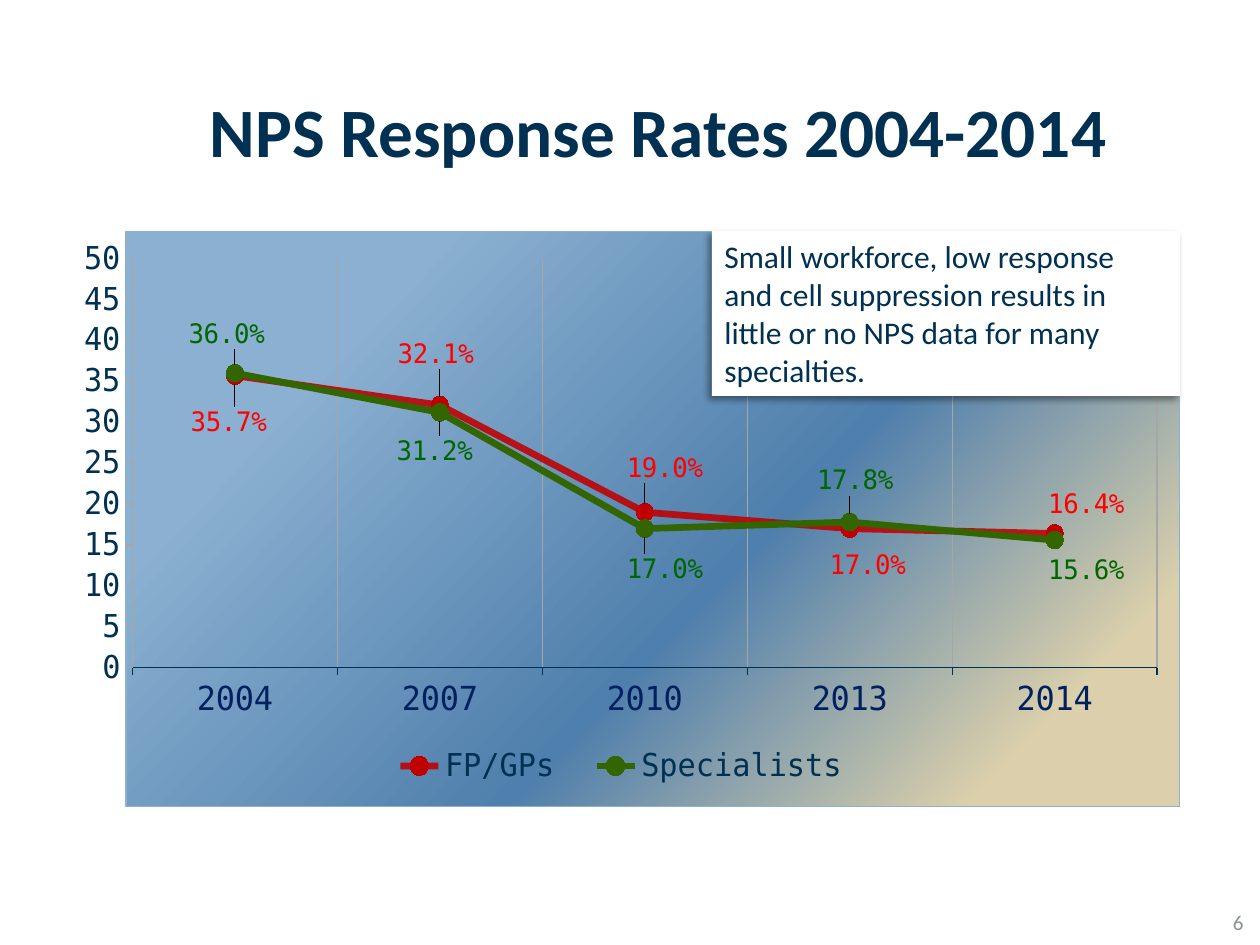
from dataclasses import dataclass

from lxml import etree
from pptx import Presentation
from pptx.chart.data import CategoryChartData
from pptx.dml.color import RGBColor
from pptx.enum.chart import XL_CHART_TYPE, XL_LABEL_POSITION, XL_LEGEND_POSITION
from pptx.enum.chart import XL_MARKER_STYLE, XL_TICK_MARK
from pptx.enum.shapes import MSO_SHAPE
from pptx.enum.text import MSO_ANCHOR, PP_ALIGN
from pptx.oxml import parse_xml
from pptx.oxml.ns import qn
from pptx.util import Pt

LINE_MARKERS = XL_CHART_TYPE.LINE_MARKERS
ABOVE, BELOW = XL_LABEL_POSITION.ABOVE, XL_LABEL_POSITION.BELOW
LEGEND_TOP = XL_LEGEND_POSITION.TOP
CIRCLE = XL_MARKER_STYLE.CIRCLE
TICK_OUT, TICK_NONE = XL_TICK_MARK.OUTSIDE, XL_TICK_MARK.NONE
RECTANGLE = MSO_SHAPE.RECTANGLE
TOP, MIDDLE = MSO_ANCHOR.TOP, MSO_ANCHOR.MIDDLE
LEFT, CENTER, RIGHT = PP_ALIGN.LEFT, PP_ALIGN.CENTER, PP_ALIGN.RIGHT

EMU_PER_PX = 914400 / 126
PAGE_SIZE = (1260, 945)
PERCENT_FORMAT = "#.0\\%"
DRAWING = 'xmlns:a="http://schemas.openxmlformats.org/drawingml/2006/main"'
CHART = 'xmlns:c="http://schemas.openxmlformats.org/drawingml/2006/chart"'


@dataclass(frozen=True)
class Theme:
    text_font: str = "Calibri"
    chart_font: str = "DejaVu Sans Mono"
    ink: str = "003152"
    axis_ink: str = "002060"
    muted: str = "8C9098"
    paper: str = "FFFFFF"
    grid: str = "A6A6A6"
    border: str = "8BB0D1"
    gradient: tuple = ((13, "DBD0AB"), (42, "4F7FAC"), (80, "8BB0D1"))
    title_size: float = 39.6
    body_size: float = 18
    axis_size: float = 19
    label_size: float = 15.3
    number_size: float = 12


@dataclass(frozen=True)
class Line:
    name: str
    values: tuple
    color: str
    label_color: str
    label_places: tuple
    opacity: int = 100


YEARS = ("2004", "2007", "2010", "2013", "2014")
LINES = (
    Line("FP/GPs", (35.7, 32.1, 19, 17, 16.4), "C00000", "FF0000",
         ((BELOW, -7, 17), (ABOVE, -4, -22), (ABOVE, 21, -15),
          (BELOW, 19, 7), (ABOVE, 33, 0)), 88),
    Line("Specialists", (36, 31.2, 17, 17.8, 15.6), "336600", "006600",
         ((ABOVE, -9, -10), (BELOW, -5, 10), (BELOW, 21, 11),
          (ABOVE, 6, -12), (BELOW, 33, 1))),
)


def px(length):
    return round(length * EMU_PER_PX)


def rgb(color):
    return RGBColor.from_string(color)


def style_font(font, name, size, color, bold=False):
    font.name, font.size, font.bold = name, Pt(size), bold
    font.color.rgb = rgb(color)


def write_text(box, text, *, font, size, color, bold=False, align=LEFT, anchor=TOP):
    frame = box.text_frame
    frame.word_wrap = True
    frame.vertical_anchor = anchor
    para = frame.paragraphs[0]
    para.alignment = align
    span = para.add_run()
    span.text = text
    style_font(span.font, font, size, color, bold)


def manual_layout(x, y, width=None, height=None, inner=False):
    target = '<c:layoutTarget val="inner"/>' if inner else ""
    modes, sizes = "", ""
    if width is not None:
        modes = '<c:xMode val="edge"/><c:yMode val="edge"/>'
        sizes = f'<c:w val="{width}"/><c:h val="{height}"/>'
    return parse_xml(
        f"<c:layout {CHART}><c:manualLayout>{target}{modes}"
        f'<c:x val="{x}"/><c:y val="{y}"/>{sizes}</c:manualLayout></c:layout>')


class SlideBuilder:
    def __init__(self, theme):
        self.theme = theme
        self.deck = Presentation()
        self.deck.slide_width, self.deck.slide_height = map(px, PAGE_SIZE)
        self.page = self.deck.slides.add_slide(self.deck.slide_layouts[6])

    def text(self, place, text, **style):
        box = self.page.shapes.add_textbox(*map(px, place))
        write_text(box, text, font=self.theme.text_font, **style)

    def note(self, place, text):
        theme = self.theme
        box = self.page.shapes.add_shape(RECTANGLE, *map(px, place))
        box.shadow.inherit = False
        box.fill.solid()
        box.fill.fore_color.rgb = rgb(theme.paper)
        box.line.fill.background()
        effects = box._element.spPr.find(qn("a:effectLst"))
        effects.append(parse_xml(
            f'<a:outerShdw {DRAWING} blurRad="{Pt(4)}" dist="{Pt(3)}" dir="8100000" '
            'algn="tr" rotWithShape="0"><a:srgbClr val="000000">'
            '<a:alpha val="40000"/></a:srgbClr></a:outerShdw>'))
        write_text(box, text, font=theme.text_font, size=theme.body_size, color=theme.ink)

    def line_chart(self, place, categories, lines):
        theme = self.theme
        data = CategoryChartData()
        data.categories = categories
        for line in lines:
            data.add_series(line.name, line.values)
        frame = self.page.shapes.add_chart(LINE_MARKERS, *map(px, place), data)
        chart = frame.chart
        style_font(chart.font, theme.chart_font, theme.body_size, theme.ink)
        chart.has_title = False
        self.chart_background(chart)
        self.chart_axes(chart)
        chart.has_legend = True
        chart.legend.position = LEGEND_TOP
        chart.legend.include_in_layout = False
        legend = chart.legend._element
        for old in legend.findall(qn("c:layout")):
            legend.remove(old)
        legend.insert(1, manual_layout(0.23, 0.89, 0.48, 0.08))
        area = chart._chartSpace.chart.plotArea
        for old in area.findall(qn("c:layout")):
            area.remove(old)
        area.insert(0, manual_layout(0.006, 0.047, 0.973, 0.712, inner=True))
        for series, line in zip(chart.plots[0].series, lines):
            self.chart_line(series, line, place)

    def chart_background(self, chart):
        stops = "".join(
            f'<a:gs pos="{stop * 1000}"><a:srgbClr val="{color}"/></a:gs>'
            for stop, color in self.theme.gradient)
        chart._chartSpace.chart.addnext(parse_xml(
            f'<c:spPr {CHART} {DRAWING}><a:gradFill><a:gsLst>{stops}</a:gsLst>'
            '<a:path path="circle"><a:fillToRect l="100000" t="100000"/></a:path>'
            f'</a:gradFill><a:ln w="{Pt(0.75)}"><a:solidFill>'
            f'<a:srgbClr val="{self.theme.border}"/></a:solidFill></a:ln></c:spPr>'))

    def chart_axes(self, chart):
        theme = self.theme
        years, rates = chart.category_axis, chart.value_axis
        years.has_major_gridlines, rates.has_major_gridlines = True, False
        rates.minimum_scale, rates.maximum_scale, rates.major_unit = 0, 50, 5
        for axis, text_color, size, line_color in (
                (years, theme.axis_ink, theme.axis_size, theme.ink),
                (rates, theme.ink, theme.body_size, theme.grid)):
            axis.major_tick_mark, axis.minor_tick_mark = TICK_OUT, TICK_NONE
            style_font(axis.tick_labels.font, theme.chart_font, size, text_color)
            axis.format.line.color.rgb = rgb(line_color)
            axis.format.line.width = Pt(0.75)
        grid = years.major_gridlines.format.line
        grid.color.rgb, grid.width = rgb(theme.grid), Pt(0.75)

    def chart_line(self, series, line, place):
        theme = self.theme
        series.smooth = False
        stroke = series.format.line
        stroke.color.rgb, stroke.width = rgb(line.color), Pt(4)
        if line.opacity < 100:
            color = series._element.spPr.find(".//" + qn("a:srgbClr"))
            etree.SubElement(color, qn("a:alpha"), val=str(line.opacity * 1000))
        marker = series.marker
        marker.style, marker.size = CIRCLE, 10
        marker.format.fill.solid()
        marker.format.fill.fore_color.rgb = rgb(line.color)
        marker.format.line.color.rgb = rgb(line.color)
        labels = series.data_labels
        labels.show_value = True
        labels.number_format, labels.number_format_is_linked = PERCENT_FORMAT, False
        style_font(labels.font, theme.chart_font, theme.label_size, line.label_color)
        for index, (side, right, down) in enumerate(line.label_places):
            label = series.points[index].data_label
            style_font(label.font, theme.chart_font, theme.label_size, line.label_color)
            label.position = side
            element = labels._element.findall(qn("c:dLbl"))[index]
            element.insert(1, manual_layout(round(right / place[2], 3), round(down / place[3], 3)))
            element.insert(2, parse_xml(
                f'<c:numFmt {CHART} formatCode="{PERCENT_FORMAT}" sourceLinked="0"/>'))


def main():
    theme = Theme()
    slide = SlideBuilder(theme)
    slide.text((1182, 900, 74, 45), "6", size=theme.number_size, color=theme.muted,
               align=RIGHT, anchor=MIDDLE)
    slide.text((181, 67, 955, 126), "NPS Response Rates 2004-2014", size=theme.title_size,
               color=theme.ink, bold=True, align=CENTER, anchor=MIDDLE)
    slide.line_chart((84, 231, 1096, 576), YEARS, LINES)
    slide.note((712, 231, 468, 165), "Small workforce, low response and cell suppression "
               "results in little or no NPS data for many specialties.")
    slide.deck.save("out.pptx")


if __name__ == "__main__":
    main()
